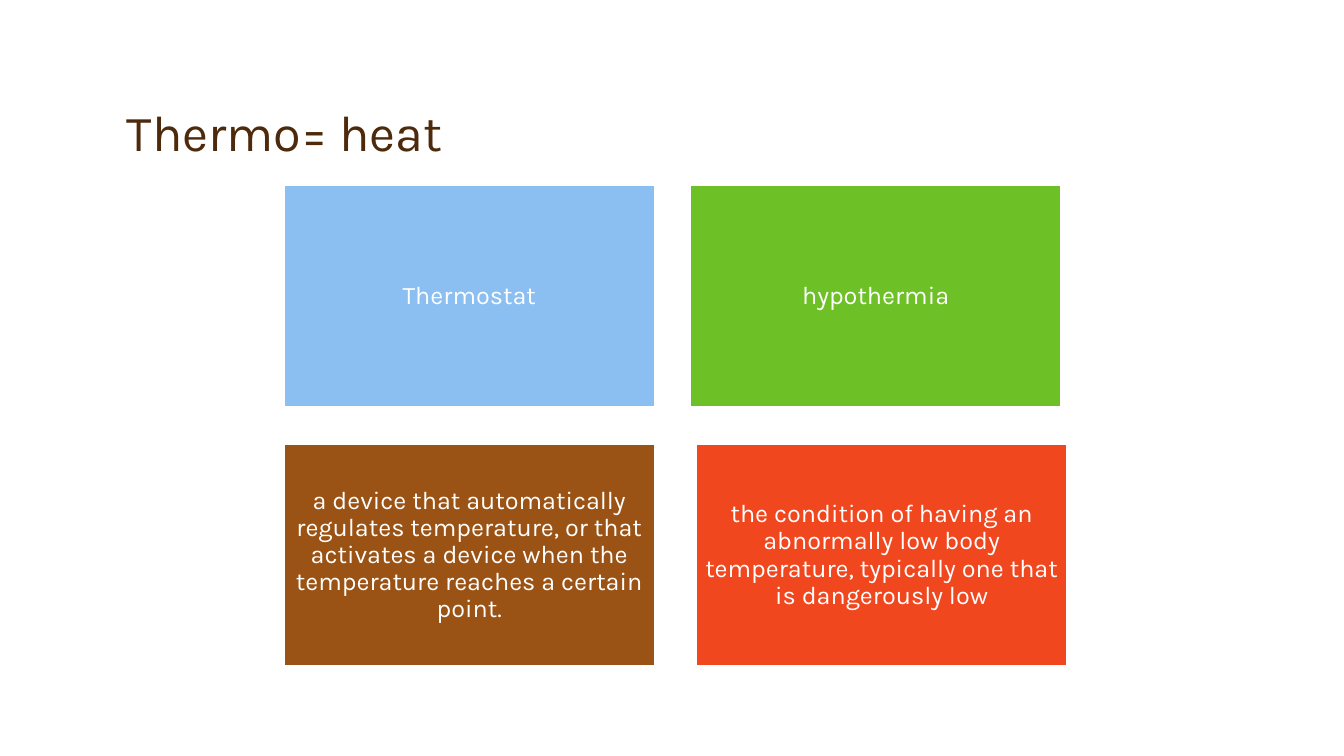
from pptx import Presentation
from pptx.dml.color import RGBColor
from pptx.enum.shapes import MSO_SHAPE as SHAPE
from pptx.enum.text import MSO_ANCHOR as ANCHOR, PP_ALIGN as ALIGN
from pptx.util import Inches, Pt

FONT = "Karla"
CARD_W, CARD_H = 3.67, 2.2
ROW_GAP = 0.37
ROWS = [
    (0.36, [("Thermostat", "8BBEF1"), ("hypothermia", "6DC025")]),
    (0.42, [
        ("a device that automatically regulates temperature, or that activates "
         "a device when the temperature reaches a certain point.", "9A5315"),
        ("the condition of having an abnormally low body temperature, "
         "typically one that is dangerously low", "F1471F"),
    ]),
]


def rgb(color):
    return RGBColor.from_string(color)


def write(tf, text, size, color, align, anchor):
    tf.word_wrap = True
    tf.vertical_anchor = anchor
    p = tf.paragraphs[0]
    p.text = text
    p.alignment = align
    p.line_spacing = 0.9
    font = p.runs[0].font
    font.name = FONT
    font.size = Pt(size)
    font.color.rgb = rgb(color)


def add_title(s, text, x, y, w, h):
    box = s.shapes.add_textbox(Inches(x), Inches(y), Inches(w), Inches(h))
    write(box.text_frame, text, 36, "4D2A0B", ALIGN.LEFT, ANCHOR.BOTTOM)


def add_card(s, text, fill, x, y, w, h):
    sp = s.shapes.add_shape(SHAPE.RECTANGLE, Inches(x), Inches(y), Inches(w), Inches(h))
    sp.shadow.inherit = False
    sp.fill.solid()
    sp.fill.fore_color.rgb = rgb(fill)
    sp.line.color.rgb = rgb("FFFFFF")
    sp.line.width = Pt(1)
    tf = sp.text_frame
    tf.margin_left = tf.margin_right = tf.margin_top = tf.margin_bottom = Inches(0.07)
    write(tf, text, 18, "FFFFFF", ALIGN.CENTER, ANCHOR.MIDDLE)


def add_cards(s, x, y):
    for row, (gap, cards) in enumerate(ROWS):
        for col, (text, fill) in enumerate(cards):
            add_card(s, text, fill, x + col * (CARD_W + gap),
                     y + row * (CARD_H + ROW_GAP), CARD_W, CARD_H)


def main():
    prs = Presentation()
    prs.slide_width, prs.slide_height = Inches(13.33), Inches(7.5)
    s = prs.slides.add_slide(prs.slide_layouts[6])
    add_title(s, "Thermo= heat", 1.16, 0.33, 11, 1.33)
    add_cards(s, 2.82, 1.84)
    prs.save("out.pptx")


if __name__ == "__main__":
    main()
